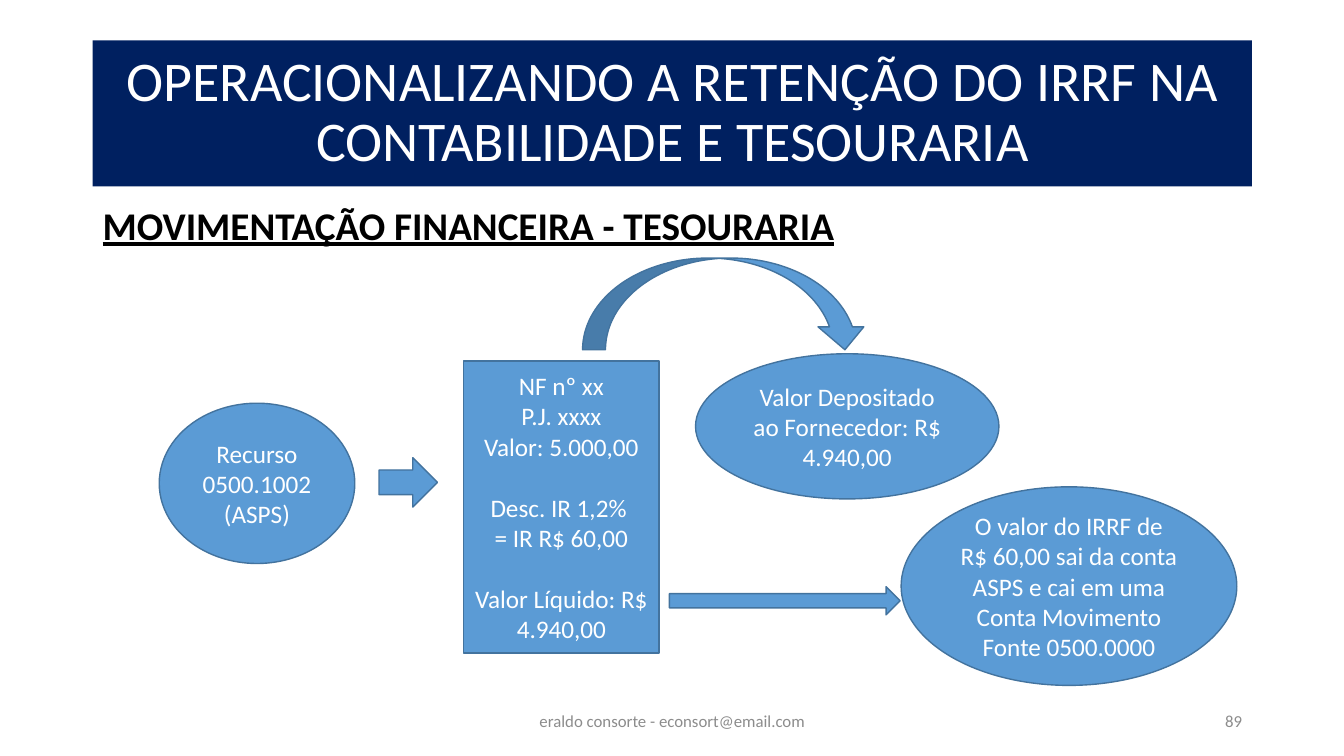
import pptx
import pptx.util
import pptx.dml.color
import pptx.enum.shapes
import pptx.enum.text

COLORS = {"navy": "002060", "blue": "5B9BD5", "edge": "43739E",
          "white": "FFFFFF", "black": "000000", "gray": "8C8C8C"}
COLUMNS, ROWS = 133.33, 75
CELL = pptx.util.Inches(0.1)
LINE_HEIGHT = 22
SHAPES = pptx.enum.shapes.MSO_SHAPE
ALIGN = pptx.enum.text.PP_ALIGN
ANCHOR = pptx.enum.text.MSO_ANCHOR


def color(name):
    return pptx.dml.color.RGBColor.from_string(COLORS[name])


def place(box):
    return [round(length * CELL) for length in box]


def inside(box, part):
    return box[0] + part[0], box[1] + part[1], part[2], part[3]


def write(shape, text, size, color_name, align=ALIGN.CENTER, anchor=ANCHOR.MIDDLE,
          bold=False, underline=False, line_spacing=1.0):
    text_frame = shape.text_frame
    text_frame.word_wrap = True
    text_frame.vertical_anchor = anchor
    text_frame.text = text
    for paragraph in text_frame.paragraphs:
        paragraph.alignment = align
        paragraph.line_spacing = line_spacing
        for run in paragraph.runs:
            run.font.name = "Calibri"
            run.font.size = pptx.util.Pt(size)
            run.font.bold = bold
            run.font.underline = underline
            run.font.color.rgb = color(color_name)


def add_block(slide, kind, box, text=""):
    shape = slide.shapes.add_shape(kind, *place(box))
    shape.shadow.inherit = False
    shape.fill.solid()
    shape.fill.fore_color.rgb = color("blue")
    shape.line.color.rgb = color("edge")
    shape.line.width = pptx.util.Pt(1)
    if text:
        write(shape, text, 18, "white")
    return shape


def add_title(slide, box):
    title = slide.shapes.add_textbox(*place(box))
    title.fill.solid()
    title.fill.fore_color.rgb = color("navy")
    write(title, "OPERACIONALIZANDO A RETENÇÃO DO IRRF NA CONTABILIDADE E TESOURARIA",
          40, "white", line_spacing=0.9)


def add_subtitle(slide, box):
    subtitle = slide.shapes.add_textbox(*place(box))
    write(subtitle, "MOVIMENTAÇÃO FINANCEIRA - TESOURARIA", 28, "black", ALIGN.LEFT,
          ANCHOR.TOP, bold=True, underline=True, line_spacing=0.9)


def add_flow(slide, box):
    add_block(slide, SHAPES.OVAL, inside(box, (0, 14.4, 19.4, 15.9)),
              "Recurso 0500.1002\n(ASPS)")
    invoice = add_block(slide, SHAPES.RECTANGLE, inside(box, (30.2, 10.2, 19.4, 29)),
                        "NF nº xx\nP.J. xxxx\nValor: 5.000,00\nDesc. IR 1,2% \n"
                        "= IR R$ 60,00\nValor Líquido: R$ 4.940,00")
    for paragraph in invoice.text_frame.paragraphs:
        if paragraph.text.startswith(("Desc.", "Valor Líquido")):
            paragraph.space_before = pptx.util.Pt(LINE_HEIGHT)
    add_block(slide, SHAPES.OVAL, inside(box, (53.2, 9.5, 30.1, 14.4)),
              "Valor Depositado ao Fornecedor: R$ 4.940,00")
    add_block(slide, SHAPES.OVAL, inside(box, (73.6, 22.7, 33.3, 19.7)),
              "O valor do IRRF de\vR$ 60,00 sai da conta ASPS e cai em uma "
              "Conta Movimento Fonte 0500.0000")
    add_block(slide, SHAPES.RIGHT_ARROW, inside(box, (21.8, 19.8, 5.8, 4.9)))
    add_block(slide, SHAPES.CURVED_DOWN_ARROW, inside(box, (42, 0, 28.3, 9.1)))
    add_block(slide, SHAPES.RIGHT_ARROW, inside(box, (50.6, 32.6, 22.9, 2.8)))


def add_footer(slide, box):
    credit = slide.shapes.add_textbox(*place(inside(box, (35, 0, 45, 4))))
    write(credit, "eraldo consorte - econsort@email.com", 12, "gray")
    number = slide.shapes.add_textbox(*place(inside(box, (85, 0, 30, 4))))
    write(number, "89", 12, "gray", ALIGN.RIGHT)


def main():
    presentation = pptx.Presentation()
    presentation.slide_width, presentation.slide_height = place((COLUMNS, ROWS))
    slide = presentation.slides.add_slide(presentation.slide_layouts[6])
    add_subtitle(slide, (9.2, 20, 115, 6))
    add_title(slide, (9.2, 4, 115, 14.5))
    add_flow(slide, (15.8, 25.6, 106.9, 42.4))
    add_footer(slide, (9.2, 69.5, 115, 4))
    presentation.save("out.pptx")


if __name__ == "__main__":
    main()
